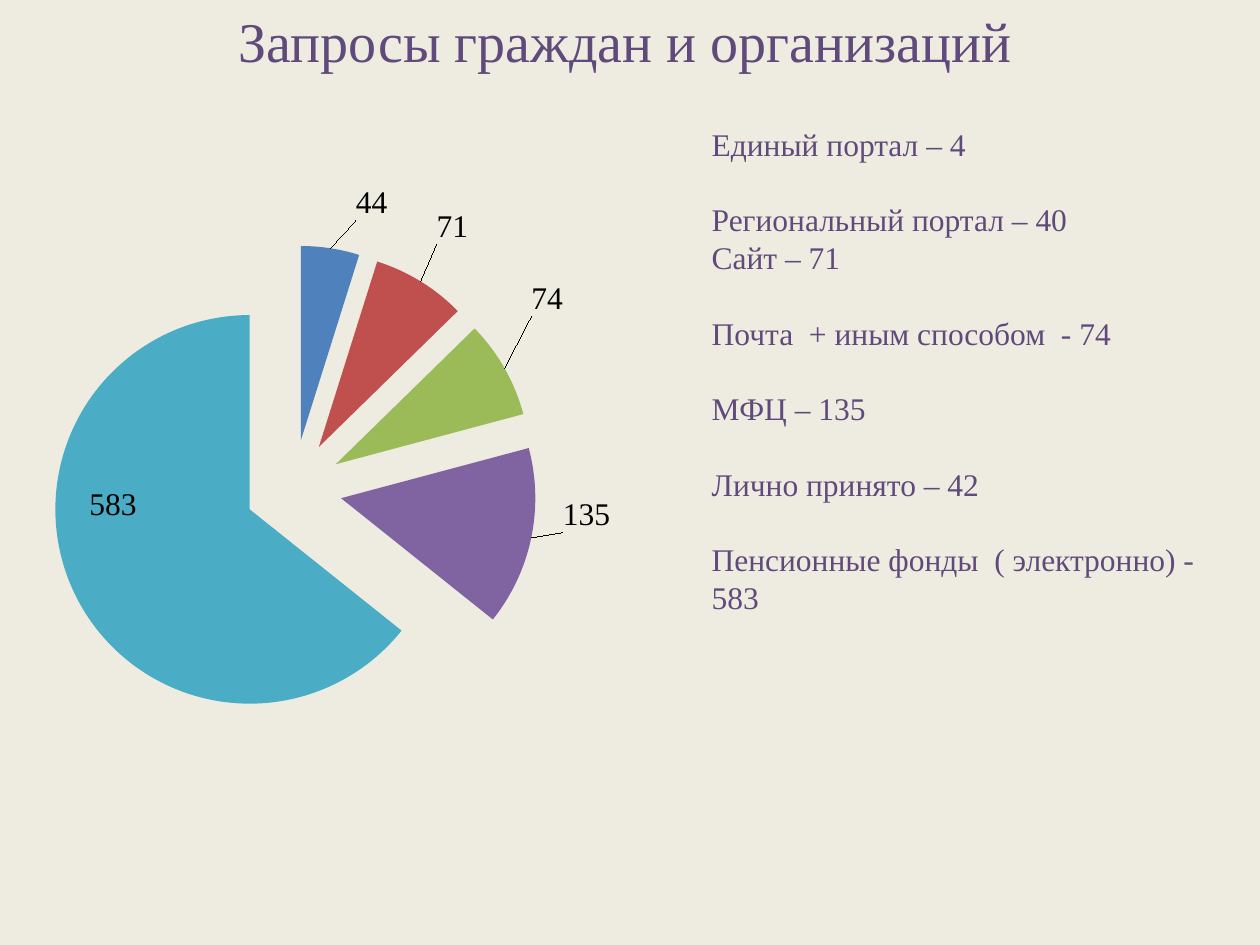
from dataclasses import dataclass

from lxml.etree import SubElement
from pptx import Presentation
from pptx.chart.data import CategoryChartData
from pptx.dml.color import RGBColor
from pptx.enum.chart import XL_CHART_TYPE, XL_LABEL_POSITION
from pptx.enum.text import MSO_ANCHOR, MSO_AUTO_SIZE, PP_ALIGN
from pptx.oxml import parse_xml
from pptx.oxml.ns import nsdecls, qn
from pptx.util import Inches, Pt


@dataclass(frozen=True)
class Theme:
    font: str = "Times New Roman"
    background: str = "EEECE1"
    text: str = "604A7B"
    label: str = "000000"
    slices: tuple = ("4F81BD", "C0504D", "9BBB59", "8064A2", "4BACC6")
    title_size: int = 32
    body_size: int = 18
    line_ratio: float = 1.2


REQUEST_COUNTS = (44, 71, 74, 135, 583)
LABEL_SHIFTS = ((0.03, -0.03), (0.015, -0.045), (0.025, -0.07), (0.03, -0.06), (0.01, -0.1))
PLOT_AREA = {"x": 0.062, "y": 0.088, "w": 0.595, "h": 0.819}
CHANNELS = (
    ("Единый портал – 4", False),
    ("Региональный портал – 40", True),
    ("Сайт – 71", False),
    ("Почта  + иным способом  - 74", True),
    ("МФЦ – 135", True),
    ("Лично принято – 42", True),
    ("Пенсионные фонды  ( электронно) - 583", True),
)


def manual_layout(values, inner=False):
    layout = parse_xml(f"<c:layout {nsdecls('c')}><c:manualLayout/></c:layout>")
    settings = dict(values)
    if inner:
        settings = {"layoutTarget": "inner", "xMode": "edge", "yMode": "edge", **settings}
    for name, value in settings.items():
        SubElement(layout[0], qn(f"c:{name}")).set("val", str(value))
    return layout


class SlideBuilder:
    def __init__(self, deck, theme):
        self.theme = theme
        self.page = deck.slides.add_slide(deck.slide_layouts[5])
        fill = self.page.background.fill
        fill.solid()
        fill.fore_color.rgb = RGBColor.from_string(theme.background)

    def style_font(self, font, size, color):
        font.name = self.theme.font
        font.size = Pt(size)
        font.color.rgb = RGBColor.from_string(color)

    def style_paragraph(self, para, size, align):
        para.alignment = align
        para.line_spacing = Pt(size * self.theme.line_ratio)
        self.style_font(para.font, size, self.theme.text)

    def prepare_frame(self, frame):
        frame.word_wrap = True
        frame.auto_size = MSO_AUTO_SIZE.SHAPE_TO_FIT_TEXT
        frame.vertical_anchor = MSO_ANCHOR.TOP

    def title(self, text, left, top, width, height):
        box = self.page.shapes.title
        box.left, box.top = Inches(left), Inches(top)
        box.width, box.height = Inches(width), Inches(height)
        box.text_frame.text = text
        self.prepare_frame(box.text_frame)
        self.style_paragraph(box.text_frame.paragraphs[0], self.theme.title_size, PP_ALIGN.CENTER)

    def text_list(self, lines, left, top, width, height):
        box = self.page.shapes.add_textbox(Inches(left), Inches(top), Inches(width), Inches(height))
        frame = box.text_frame
        self.prepare_frame(frame)
        size = self.theme.body_size
        frame.text = "\n".join(text for text, _ in lines)
        for para, (_, gap) in zip(frame.paragraphs, lines):
            self.style_paragraph(para, size, PP_ALIGN.LEFT)
            para.space_before = Pt(size * self.theme.line_ratio if gap else 0)

    def pie(self, values, shifts, left, top, width, height):
        data = CategoryChartData()
        data.categories = [str(number) for number in range(1, len(values) + 1)]
        data.add_series("Series 1", values)
        chart = self.page.shapes.add_chart(
            XL_CHART_TYPE.PIE, Inches(left), Inches(top), Inches(width), Inches(height), data
        ).chart
        chart.has_title = False
        chart.has_legend = False
        self.style_font(chart.font, self.theme.body_size, self.theme.label)
        plot = chart.plots[0]
        plot.vary_by_categories = True
        plot_area = chart.element.find(f".//{qn('c:plotArea')}")
        for layout in plot_area.findall(qn("c:layout")):
            plot_area.remove(layout)
        plot_area.insert(0, manual_layout(PLOT_AREA, inner=True))

        series = plot.series[0]
        explosion = parse_xml(f'<c:explosion {nsdecls("c")} val="25"/>')
        chart.element.find(f".//{qn('c:ser')}/{qn('c:tx')}").addnext(explosion)
        series.data_labels.show_value = True
        self.style_font(series.data_labels.font, self.theme.body_size, self.theme.label)
        for index, color in enumerate(self.theme.slices):
            point = series.points[index]
            point.format.fill.solid()
            point.format.fill.fore_color.rgb = RGBColor.from_string(color)
            largest = values[index] == max(values)
            label = point.data_label
            self.style_font(label.font, self.theme.body_size, self.theme.label)
            label.position = XL_LABEL_POSITION.INSIDE_END if largest else XL_LABEL_POSITION.OUTSIDE_END
        for label, shift in zip(chart.element.iter(qn("c:dLbl")), shifts):
            label.find(qn("c:idx")).addnext(manual_layout(zip("xy", shift)))


def main():
    deck = Presentation()
    deck.slide_width, deck.slide_height = Inches(10), Inches(7.5)
    builder = SlideBuilder(deck, Theme())
    builder.pie(REQUEST_COUNTS, LABEL_SHIFTS, 0, 1.17, 6.48, 5.44)
    builder.title("Запросы граждан и организаций", 0.55, 0, 8.83, 0.64)
    builder.text_list(CHANNELS, 5.55, 0.94, 4.22, 4.04)
    deck.save("out.pptx")


if __name__ == "__main__":
    main()
